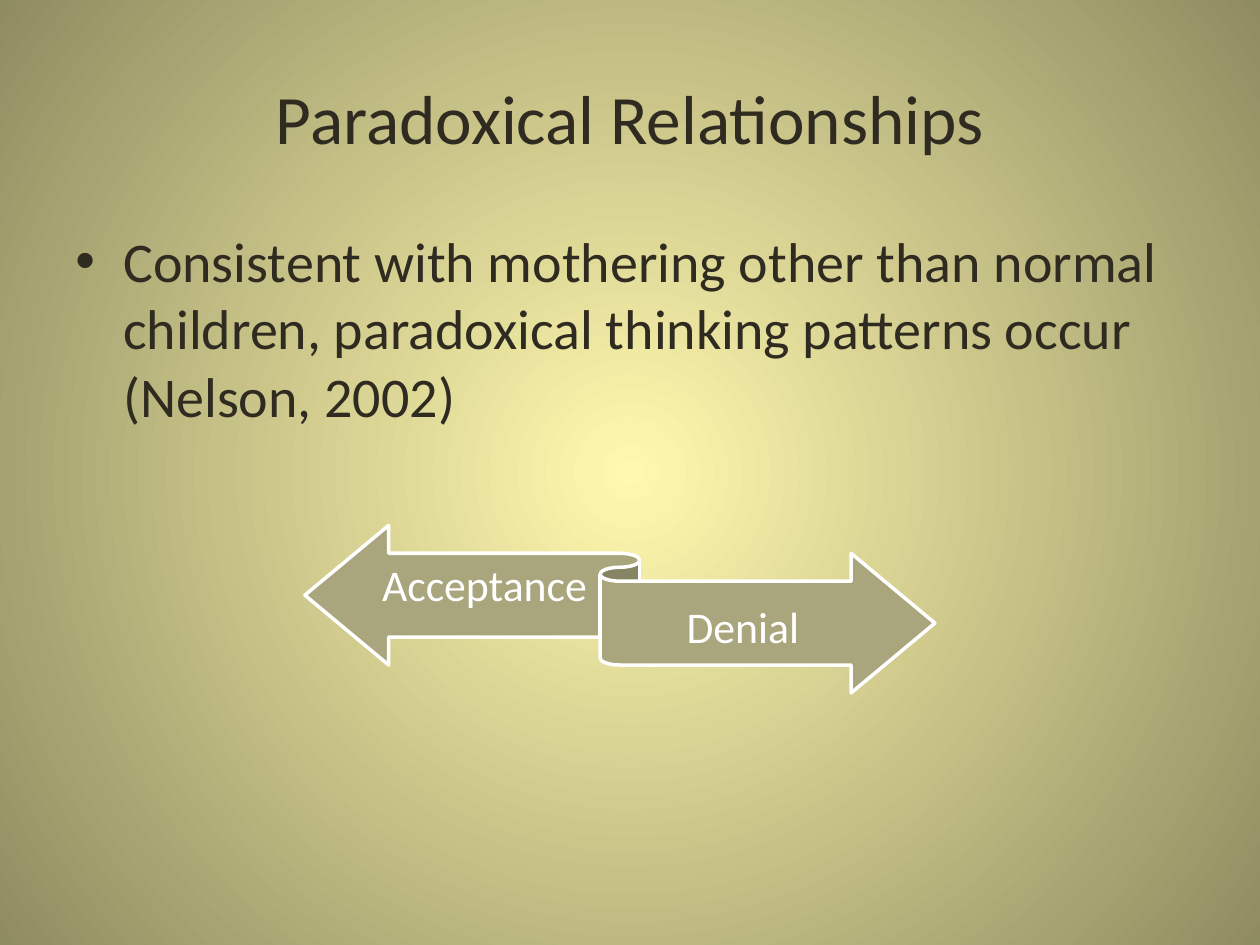
from lxml import etree
from pptx import Presentation
from pptx.dml.color import RGBColor
from pptx.enum.shapes import MSO_SHAPE
from pptx.enum.text import MSO_ANCHOR, PP_ALIGN
from pptx.oxml.ns import qn
from pptx.util import Inches, Pt

RIBBON = MSO_SHAPE.LEFT_RIGHT_RIBBON
TOP, MIDDLE = MSO_ANCHOR.TOP, MSO_ANCHOR.MIDDLE
LEFT, CENTER = PP_ALIGN.LEFT, PP_ALIGN.CENTER

WIDTH, HEIGHT = 10, 7.5
MARGIN = 0.05 * WIDTH
CONTENT_WIDTH = WIDTH - 2 * MARGIN
INK, OLIVE, WHITE = "2F2B20", "A9A57C", "FFFFFF"
GLOW, EDGE = "FFF9AF", "908C61"


def color(hex_value):
    return RGBColor.from_string(hex_value)


def paint_background(slide, center, edge):
    """Fill the background with a circular gradient from the slide's centre."""
    fill = slide.background.fill
    fill.gradient()
    for stop, shade in zip(fill.gradient_stops, (center, edge)):
        stop.color.rgb = color(shade)
    gradient = slide.element.find(".//" + qn("a:gradFill"))
    gradient.remove(gradient.find(qn("a:lin")))
    circle = etree.SubElement(gradient, qn("a:path"), path="circle")
    etree.SubElement(circle, qn("a:fillToRect"),
                     {side: "50000" for side in "ltrb"})


def add_text(slide, text, box, size, shade, align=CENTER, anchor=MIDDLE,
             insets=(0, 0.1, 0, 0.1)):
    """Add one paragraph; insets run left, top, right, bottom in inches."""
    frame = slide.shapes.add_textbox(*map(Inches, box)).text_frame
    frame.word_wrap = True
    frame.vertical_anchor = anchor
    (frame.margin_left, frame.margin_top,
     frame.margin_right, frame.margin_bottom) = map(Inches, insets)
    paragraph = frame.paragraphs[0]
    paragraph.alignment = align
    run = paragraph.add_run()
    run.text = text
    run.font.name = "Calibri"
    run.font.size = Pt(size)
    run.font.color.rgb = color(shade)
    return paragraph


def add_bullet(paragraph, indent):
    properties = paragraph._p.get_or_add_pPr()
    properties.set("marL", str(Inches(indent)))
    properties.set("indent", str(-Inches(indent)))
    etree.SubElement(properties, qn("a:buFont"), typeface="Arial")
    etree.SubElement(properties, qn("a:buChar"), char="•")


def add_ribbon(slide, left, top, width, height):
    ribbon = slide.shapes.add_shape(
        RIBBON, *map(Inches, (left, top, width, height)))
    ribbon.shadow.inherit = False
    ribbon.fill.solid()
    ribbon.fill.fore_color.rgb = color(OLIVE)
    ribbon.line.color.rgb = color(WHITE)
    ribbon.line.width = Pt(2)


def add_ribbon_label(slide, text, box):
    label = add_text(slide, text, box, 25, WHITE)
    label.line_spacing = 0.9


def main():
    deck = Presentation()
    deck.slide_width, deck.slide_height = Inches(WIDTH), Inches(HEIGHT)
    slide = deck.slides.add_slide(deck.slide_layouts[6])
    paint_background(slide, GLOW, EDGE)

    add_text(slide, "Paradoxical Relationships",
             (MARGIN, 0.04 * HEIGHT, CONTENT_WIDTH, 0.95), 39.6, INK,
             anchor=TOP, insets=(0.1, 0.3, 0.1, 0))
    statement = add_text(
        slide,
        "Consistent with mothering other than normal children, "
        "paradoxical thinking patterns occur (Nelson, 2002)",
        (MARGIN, 1.75, CONTENT_WIDTH, 0.66 * HEIGHT), 32, INK,
        align=LEFT, anchor=TOP, insets=(0.1, 0.05, 0.1, 0.05))
    statement.space_before = Pt(6.4)
    add_bullet(statement, 0.38)

    left, top, width, height = 2.42, 4.17, 5, 1.33
    add_ribbon(slide, left, top, width, height)
    label_height = 0.74 * height
    add_ribbon_label(slide, "Acceptance",
                     (left + 0.12 * width, top, 0.33 * width, label_height))
    add_ribbon_label(slide, "Denial",
                     (left + 0.5 * width, top + 0.25 * height,
                      0.39 * width, label_height))

    deck.save("out.pptx")


if __name__ == "__main__":
    main()
